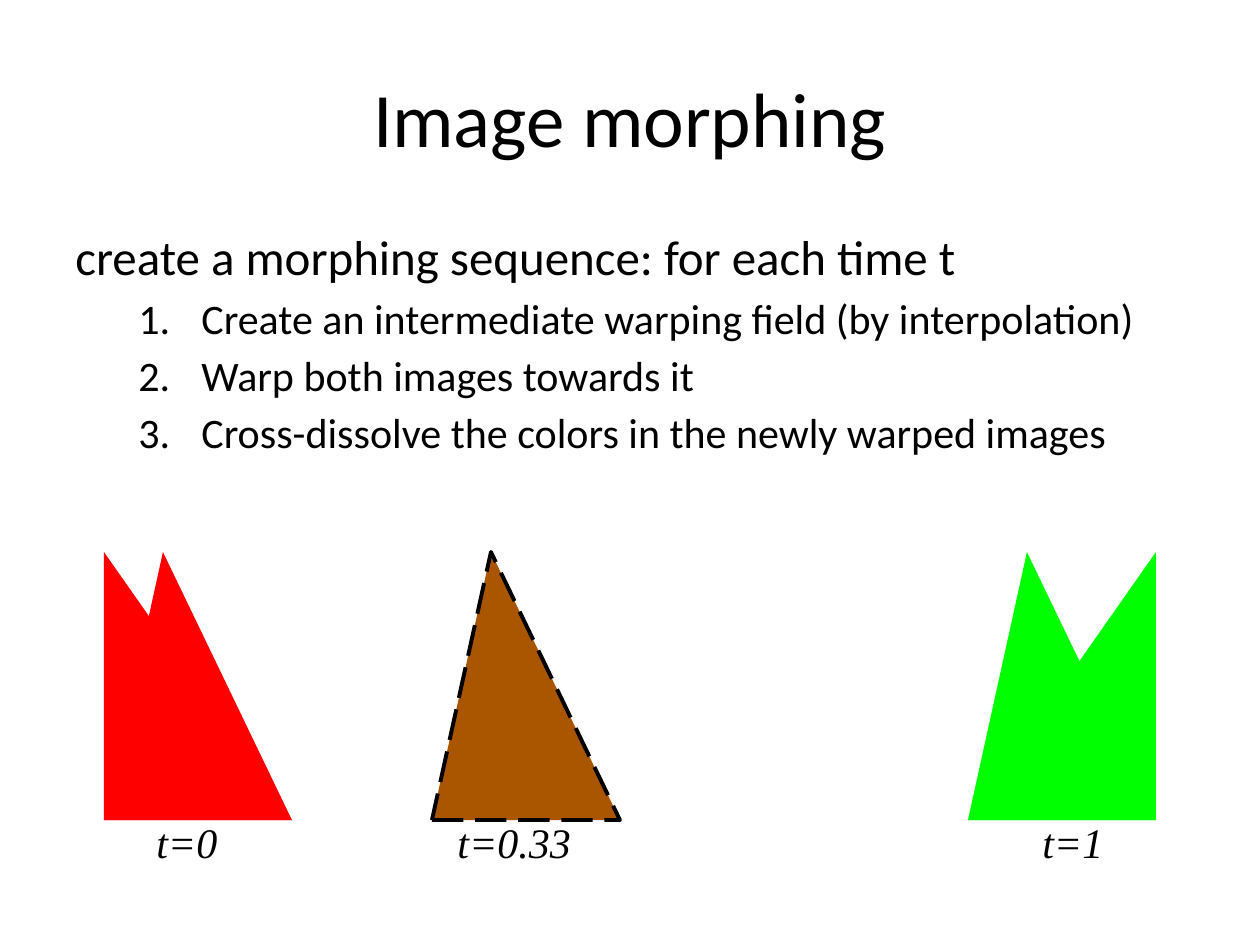
from lxml import etree
from pptx import Presentation
from pptx.dml.color import RGBColor
from pptx.enum.dml import MSO_LINE
from pptx.enum.text import MSO_ANCHOR, MSO_AUTO_SIZE, PP_ALIGN
from pptx.oxml.ns import qn
from pptx.util import Pt

PX = 7258  # EMU in one px, 126 px to the inch
BLACK = RGBColor(0, 0, 0)
RED = RGBColor(0xFF, 0, 0)
GREEN = RGBColor(0, 0xFF, 0)
BROWN = RGBColor(0xAA, 0x55, 0)
CENTER, MIDDLE = PP_ALIGN.CENTER, MSO_ANCHOR.MIDDLE
FIT_SHAPE, LONG_DASH = MSO_AUTO_SIZE.SHAPE_TO_FIT_TEXT, MSO_LINE.LONG_DASH

# Content
TITLE = "Image morphing"
INTRO = "create a morphing sequence: for each time t"
STEPS = [
    "Create an intermediate warping field (by interpolation)",
    "Warp both images towards it",
    "Cross-dissolve the colors in the newly warped images",
]
# Triangle left, colour, apex offset of the wedge behind (or None)
WIDTH, APEX, TOP, BOTTOM = 188, 59, 552, 820
FRAMES = [(104, RED, 0), (968, GREEN, WIDTH), (432, BROWN, None)]
# Label text, left, width
LABELS = [("t=0", 144, 87), ("t=1", 1030, 87), ("t=0.33", 445, 139)]


def add_text(page, left, top, width, height, wrap=True):
    box = page.shapes.add_textbox(left * PX, top * PX, width * PX, height * PX)
    box.text_frame.word_wrap = wrap
    return box.text_frame


def write(para, text, size, font="Calibri", italic=False):
    para.text = text
    para.font.size, para.font.name = Pt(size), font
    para.font.italic = italic
    para.font.color.rgb = BLACK


def indent(para, margin, hanging, numbered=False):
    props = para._p.get_or_add_pPr()
    props.set("marL", str(margin * PX))
    props.set("indent", str(-hanging * PX))
    if numbered:
        etree.SubElement(props, qn("a:buFont"), typeface="+mj-lt")
        etree.SubElement(props, qn("a:buAutoNum"), type="arabicPeriod")


def add_triangle(page, left, apex, fill=None):
    builder = page.shapes.build_freeform(left, BOTTOM, scale=PX)
    builder.add_line_segments([(left + WIDTH, BOTTOM), (left + apex, TOP)], close=True)
    triangle = builder.convert_to_shape()
    triangle.shadow.inherit = False
    if fill is None:
        triangle.fill.background()
        triangle.line.color.rgb = BLACK
        triangle.line.width = Pt(2.25)
        triangle.line.dash_style = LONG_DASH
    else:
        triangle.fill.solid()
        triangle.fill.fore_color.rgb = fill
        triangle.line.fill.background()


deck = Presentation()
deck.slide_width, deck.slide_height = 1260 * PX, 945 * PX
page = deck.slides.add_slide(deck.slide_layouts[6])

# Title
frame = add_text(page, 63, 38, 1134, 157)
frame.vertical_anchor = MIDDLE
write(frame.paragraphs[0], TITLE, 44)
frame.paragraphs[0].alignment = CENTER

# Intro and numbered steps
frame = add_text(page, 63, 220, 1134, 624)
intro = frame.paragraphs[0]
write(intro, INTRO, 28)
intro.space_before = Pt(5)
indent(intro, 73, 73)
for step in STEPS:
    para = frame.add_paragraph()
    write(para, step, 24)
    para.space_before = Pt(4)
    para.level = 1
    indent(para, 126, 63, numbered=True)

# Wedges behind
for left, color, wedge_apex in FRAMES:
    if wedge_apex is not None:
        add_triangle(page, left, wedge_apex, color)

# Time labels
for text, left, width in LABELS:
    frame = add_text(page, left, 810, width, 63, wrap=False)
    frame.auto_size = FIT_SHAPE
    write(frame.paragraphs[0], text, 24, "Times New Roman", italic=True)

# Triangles in front, with the warped one outlined
for left, color, _ in FRAMES:
    add_triangle(page, left, APEX, color)
add_triangle(page, FRAMES[-1][0], APEX)

deck.save("out.pptx")
